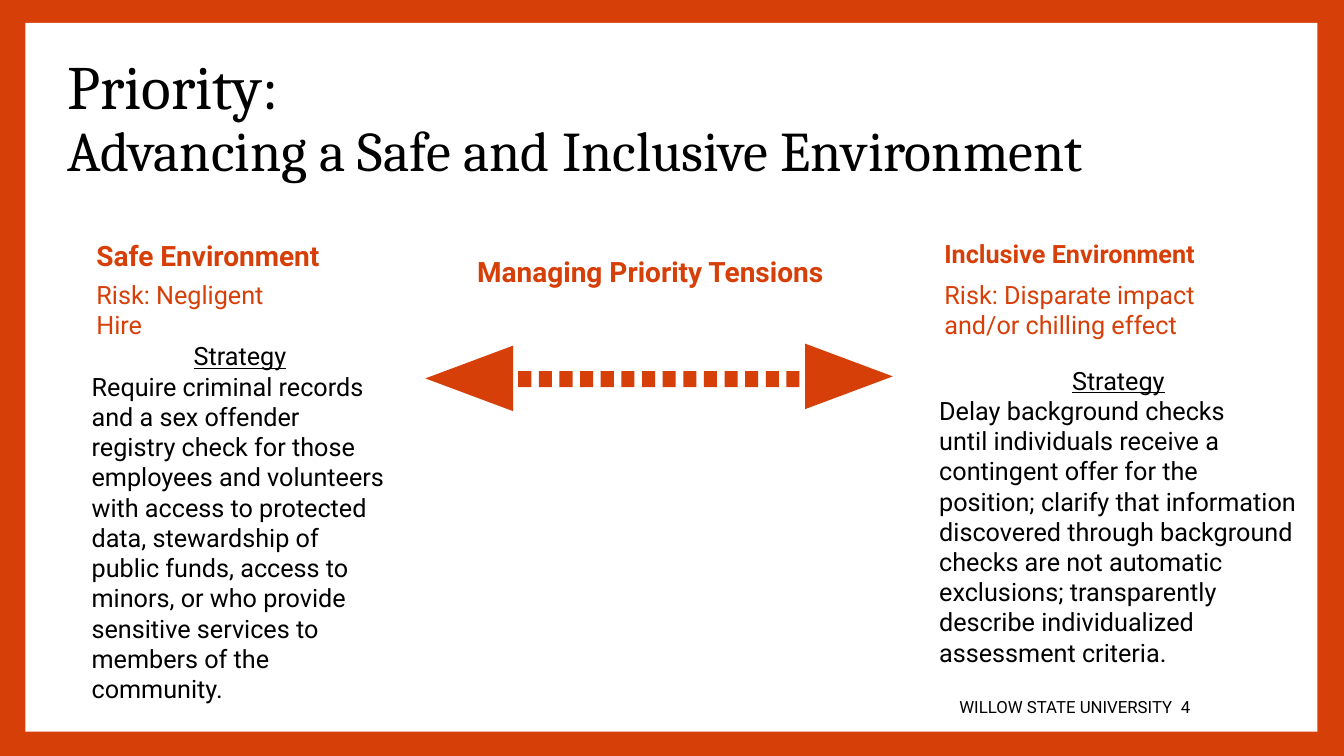
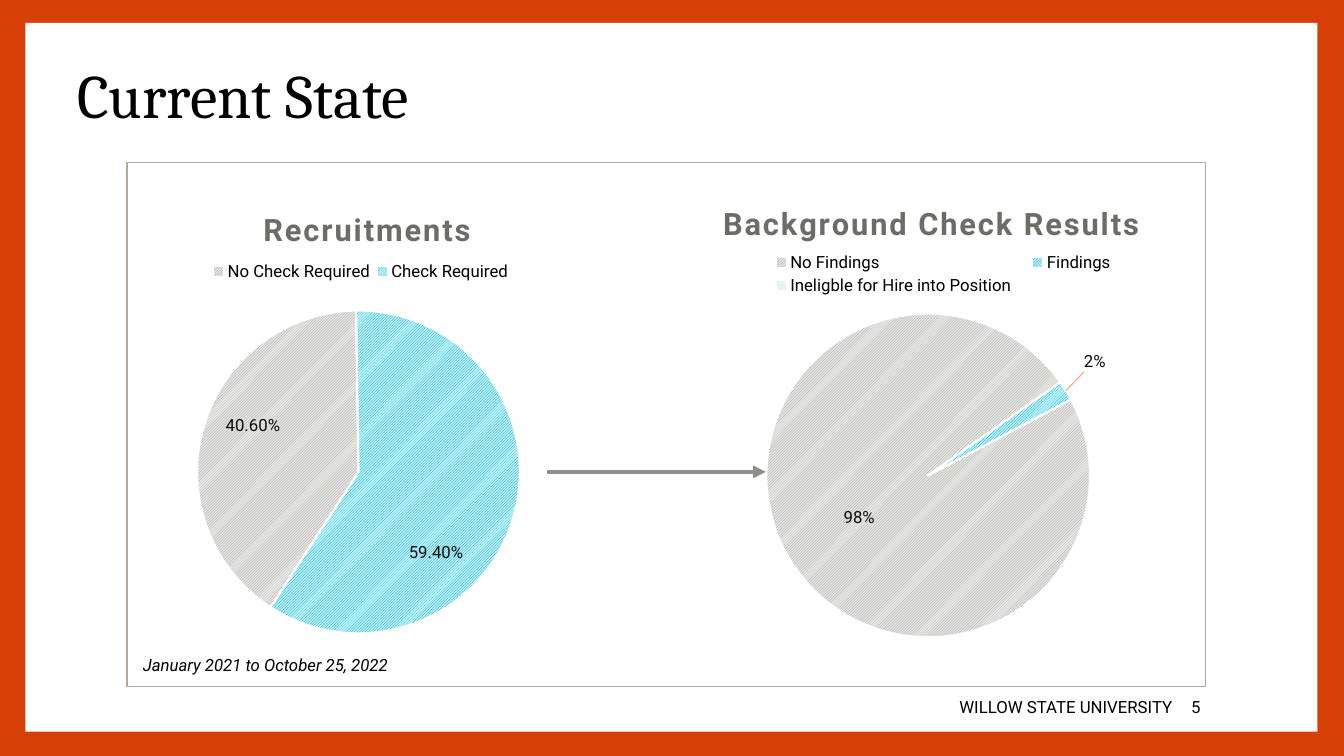
from lxml import etree
from pptx import Presentation
from pptx.chart.data import CategoryChartData
from pptx.dml.color import RGBColor
from pptx.enum.chart import XL_CHART_TYPE as ChartType
from pptx.enum.chart import XL_LABEL_POSITION as LabelPosition
from pptx.enum.chart import XL_LEGEND_POSITION as LegendPosition
from pptx.enum.dml import MSO_PATTERN as Pattern
from pptx.enum.shapes import MSO_CONNECTOR as Connector
from pptx.enum.shapes import MSO_SHAPE as Shape
from pptx.enum.text import MSO_ANCHOR as Anchor
from pptx.enum.text import PP_ALIGN as Align
from pptx.oxml import parse_xml
from pptx.oxml.ns import nsdecls, qn
from pptx.util import Cm, Pt

ORANGE, WHITE, BLACK = "D73F09", "FFFFFF", "000000"
GREY, TITLE_GREY, TAN = "8E9089", "6B6D66", "B7A99A"
LABEL_TEXT, LABEL_FILL, LEADER = "0D0D0D", "F2F2F2", "F7A58A"
SLICE_COLORS = [(GREY, "E8E9E7"), ("00859B", "B8F5FF"), ("B8DDE1", "F1F8F9")]


def color(value):
    return RGBColor.from_string(value)


def chart_xml(tag, inner="", attributes=""):
    return parse_xml(f'<c:{tag} {nsdecls("c", "a")} {attributes}>{inner}</c:{tag}>')


def set_layout(parent, index, x, y, width=None, height=None, edge=True):
    for old in parent.findall(qn("c:layout")):
        parent.remove(old)
    parts = [("xMode", "edge"), ("yMode", "edge")] if edge else []
    parts += [("x", x), ("y", y)]
    if width:
        parts += [("w", width), ("h", height)]
    inner = "".join(f'<c:{name} val="{value}"/>' for name, value in parts)
    parent.insert(index, chart_xml("layout", f"<c:manualLayout>{inner}</c:manualLayout>"))


class SlideBuilder:
    heading_font = "Cambria"
    body_font = "Roboto"

    def __init__(self):
        self.deck = Presentation()
        self.deck.slide_width = Cm(33.87)
        self.deck.slide_height = Cm(19.05)
        self.page = None

    def new_page(self, number, number_left):
        self.page = self.deck.slides.add_slide(self.deck.slide_layouts[6])
        background = self.page.background.fill
        background.solid()
        background.fore_color.rgb = color(ORANGE)
        self.shape(Shape.RECTANGLE, 0.64, 0.58, 32.56, 17.86, fill=WHITE)
        self.text(11.23, 17.3, 18.57, 1.02, "WILLOW STATE UNIVERSITY", size=12,
                  align=Align.RIGHT, anchor=Anchor.MIDDLE)
        self.text(number_left, 17.3, 1.75, 1.02, number, size=12, anchor=Anchor.MIDDLE)

    def style(self, font, size, tint=BLACK, name=None, bold=False, italic=False, underline=False):
        font.name = name or self.body_font
        font.size = Pt(size)
        font.color.rgb = color(tint)
        font.bold = bold
        font.italic = italic
        if underline:
            font.underline = True

    def frame(self, left, top, width, height, anchor=Anchor.TOP):
        box = self.page.shapes.add_textbox(Cm(left), Cm(top), Cm(width), Cm(height))
        box.text_frame.word_wrap = True
        box.text_frame.vertical_anchor = anchor
        return box.text_frame

    def add_span(self, para, text, size, align=Align.LEFT, **look):
        para.alignment = align
        span = para.add_run()
        span.text = text
        self.style(span.font, size, **look)
        return span

    def text(self, left, top, width, height, text, size=18, anchor=Anchor.TOP, **look):
        para = self.frame(left, top, width, height, anchor).paragraphs[0]
        self.add_span(para, text, size, **look)

    def title(self, left, top, width, height, lines, anchor=Anchor.TOP, before=0):
        para = self.frame(left, top, width, height, anchor).paragraphs[0]
        para.line_spacing = 0.9
        para.space_before = Pt(before)
        for position, (line, size) in enumerate(lines):
            if position:
                para.add_line_break()
            self.add_span(para, line, size, name=self.heading_font)

    def strategy(self, left, top, width, height, *lines):
        frame = self.frame(left, top, width, height)
        self.add_span(frame.paragraphs[0], "Strategy", 18, align=Align.CENTER, underline=True)
        for line in lines:
            self.add_span(frame.add_paragraph(), line, 18)

    def shape(self, kind, left, top, width, height, fill=None, line=None, rotation=0):
        shape = self.page.shapes.add_shape(kind, Cm(left), Cm(top), Cm(width), Cm(height))
        shape.shadow.inherit = False
        shape.rotation = rotation
        if fill:
            shape.fill.solid()
            shape.fill.fore_color.rgb = color(fill)
        else:
            shape.fill.background()
        if line:
            shape.line.color.rgb = color(line)
            shape.line.width = Pt(1)
        else:
            shape.line.fill.background()

    def arrow(self, start, end, y):
        arrow = self.page.shapes.add_connector(
            Connector.STRAIGHT, Cm(start), Cm(y), Cm(end), Cm(y))
        arrow.line.color.rgb = color(GREY)
        arrow.line.width = Pt(3)
        properties = arrow._element.spPr
        tail = etree.SubElement(properties.find(qn("a:ln")), qn("a:tailEnd"))
        tail.set("type", "triangle")
        etree.SubElement(properties, qn("a:effectLst"))

    def pie(self, left, top, width, height, title, slices, start, number_format,
            title_at, legend_at, plot_at, label_shifts):
        data = CategoryChartData()
        data.categories = list(slices)
        data.add_series("Series 1", list(slices.values()))
        chart = self.page.shapes.add_chart(
            ChartType.PIE, Cm(left), Cm(top), Cm(width), Cm(height), data).chart
        self.style(chart.font, 10, ORANGE)
        text_properties = chart._chartSpace.find(qn("c:txPr"))
        text_properties.addprevious(
            chart_xml("spPr", "<a:noFill/><a:ln><a:noFill/></a:ln>"))

        chart.has_title = True
        para = chart.chart_title.text_frame.paragraphs[0]
        span = self.add_span(para, title, 22, align=Align.CENTER, tint=TITLE_GREY, bold=True)
        span._r.get_or_add_rPr().set("spc", "150")
        set_layout(chart.chart_title._element, 1, *title_at)

        chart.has_legend = True
        chart.legend.position = LegendPosition.TOP
        chart.legend.include_in_layout = False
        self.style(chart.legend.font, 12)
        set_layout(chart.legend._element, 1, *legend_at)

        plot = chart.plots[0]
        plot.vary_by_categories = True
        plot._element.append(chart_xml("firstSliceAng", attributes=f'val="{start}"'))
        set_layout(plot._element.getparent(), 0, *plot_at)
        series = plot.series[0]
        for index, shift in enumerate(label_shifts):
            self.slice(series.points[index], SLICE_COLORS[index], shift, number_format)
        leader = f'<a:ln w="9525"><a:solidFill><a:srgbClr val="{LEADER}"/></a:solidFill></a:ln>'
        series._element.find(qn("c:dLbls")).append(
            chart_xml("leaderLines", f"<c:spPr>{leader}</c:spPr>"))

    def slice(self, point, colors, shift, number_format):
        fill = point.format.fill
        fill.patterned()
        fill.pattern = Pattern.LIGHT_UPWARD_DIAGONAL
        fill.fore_color.rgb, fill.back_color.rgb = map(color, colors)
        point.format.line.color.rgb = color(WHITE)
        point.format.line.width = Pt(1.5)
        self.style(point.data_label.font, 12, LABEL_TEXT)
        point.data_label.position = LabelPosition.CENTER
        label = point.data_label._dLbl
        set_layout(label, 1, *shift, edge=False)
        label.insert(2, chart_xml(
            "numFmt", attributes=f'formatCode="{number_format}" sourceLinked="0"'))
        label.insert(3, chart_xml(
            "spPr", f'<a:solidFill><a:srgbClr val="{LABEL_FILL}"/></a:solidFill>'))


def priority_page(builder):
    builder.new_page("4", 29.51)
    builder.title(1.45, 1.3, 30.63, 4,
                  [("Priority: ", 44), ("Advancing a Safe and Inclusive Environment", 40)],
                  before=10)
    accent = dict(tint=ORANGE, bold=True)
    builder.text(2.18, 5.89, 6.4, 1.12, "Safe Environment", size=20, **accent)
    builder.text(23.55, 5.87, 7.3, 1.02, "Inclusive Environment", **accent)
    builder.text(9.42, 6.3, 13.94, 1.12, "Managing Priority Tensions", size=20,
                 align=Align.CENTER, **accent)
    builder.text(2.18, 6.91, 5.74, 1.8, "Risk: Negligent Hire", tint=ORANGE)
    builder.text(23.55, 6.91, 7.98, 1.8, "Risk: Disparate impact and/or chilling effect",
                 tint=ORANGE)
    builder.strategy(
        2.06, 8.46, 7.98, 7.95,
        "Require criminal records and a sex offender registry check for those employees "
        "and volunteers with access to protected data, stewardship of public funds, access "
        "to minors, or who provide sensitive services to members of the community.")
    builder.strategy(
        23.42, 9.07, 9.53, 7.19,
        "Delay background checks",
        "until individuals receive a contingent offer for the position; clarify that "
        "information discovered through background checks are not automatic exclusions; "
        "transparently describe individualized assessment criteria.")
    for left, top, rotation in [(11, 8.43, 270), (20.57, 8.38, 90)]:
        builder.shape(Shape.ISOSCELES_TRIANGLE, left, top, 1.65, 2.21,
                      fill=ORANGE, rotation=rotation)
    for dash in range(14):
        builder.shape(Shape.RECTANGLE, 13.06 + 0.52 * dash, 9.35, 0.33, 0.41, fill=ORANGE)


def current_state_page(builder):
    builder.new_page("5", 29.77)
    builder.title(1.7, 0.64, 29.21, 3.68, [("Current State", 44)], anchor=Anchor.MIDDLE)
    builder.pie(
        3.2, 4.52, 11.79, 12.19, "Recruitments",
        {"No Check Required": 0.406, "Check Required": 0.594}, 213, "0.00%",
        title_at=(0.28, 0.05), legend_at=(0.17, 0.16, 0.66, 0.06),
        plot_at=(0.15, 0.27, 0.69, 0.67), label_shifts=[(-0.06, -0.05), (0, 0.12)])
    builder.text(3.35, 16.38, 8.13, 0.86, "January 2021 to October 25, 2022", size=12,
                 italic=True)
    builder.shape(Shape.RECTANGLE, 3.2, 4.09, 27.18, 13.21, line=TAN)
    builder.pie(
        15.62, 4.52, 15.39, 11.94, "Background Check Results",
        {"No Findings": 0.98, "Findings": 0.02, "Ineligble for Hire into Position": 0},
        62, "0%",
        title_at=(0.16, 0.04), legend_at=(0.23, 0.15, 0.6, 0.1),
        plot_at=(0.24, 0.28, 0.53, 0.69),
        label_shifts=[(0, 0), (0.16, -0.15), (0.19, -0.04)])
    builder.arrow(13.79, 19.3, 11.89)


def main():
    builder = SlideBuilder()
    priority_page(builder)
    current_state_page(builder)
    builder.deck.save("out.pptx")


if __name__ == "__main__":
    main()
